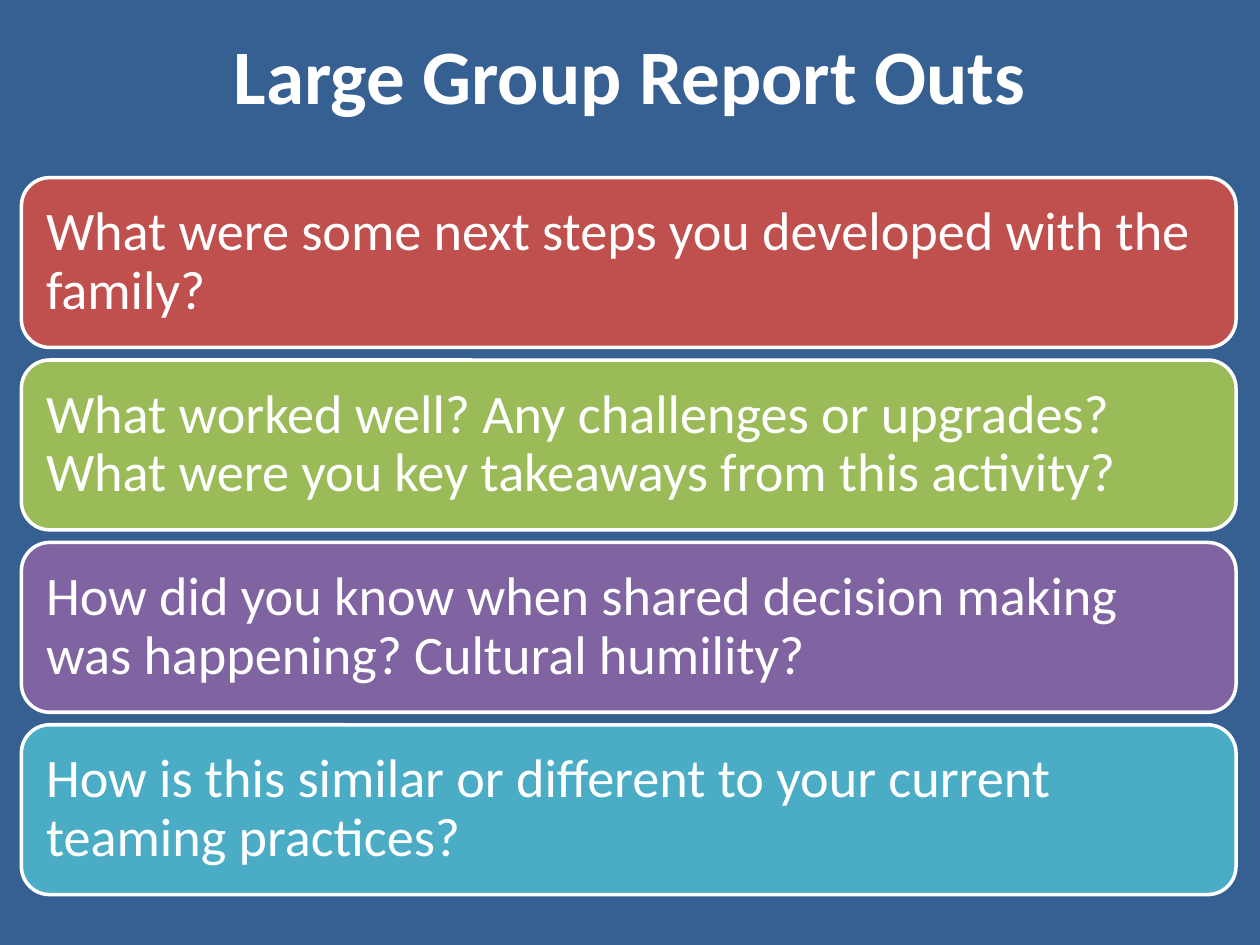
import pptx
import pptx.util
import pptx.dml.color
import pptx.enum.shapes
import pptx.enum.text

RGBColor = pptx.dml.color.RGBColor
Inches = pptx.util.Inches
Pt = pptx.util.Pt

NAVY = RGBColor(0x37, 0x60, 0x92)
WHITE = RGBColor(0xFF, 0xFF, 0xFF)
RED = RGBColor(0xC0, 0x50, 0x4D)
GREEN = RGBColor(0x9B, 0xBB, 0x59)
PURPLE = RGBColor(0x80, 0x64, 0xA2)
TEAL = RGBColor(0x4B, 0xAC, 0xC6)

FONT = "Calibri"
SLIDE_WIDTH, SLIDE_HEIGHT = 10, 7.5
TITLE_BOX = (0.5, 0, 9, 1.17)
QUESTIONS_BOX = (0.17, 1.41, 9.64, 5.69)
ROW_GAP = 0.1

QUESTIONS = [
    ("What were some next steps you developed with the family?", RED),
    ("What worked well? Any challenges or upgrades? "
     "What were you key takeaways from this activity?", GREEN),
    ("How did you know when shared decision making was happening? "
     "Cultural humility?", PURPLE),
    ("How is this similar or different to your current teaming practices?", TEAL),
]


def write_text(frame, text, size, bold=False, spacing=1.0, margin=0.1,
               align=pptx.enum.text.PP_ALIGN.LEFT):
    """Fill a text frame with one formatted, vertically centred paragraph."""
    frame.word_wrap = True
    frame.auto_size = pptx.enum.text.MSO_AUTO_SIZE.NONE
    frame.vertical_anchor = pptx.enum.text.MSO_ANCHOR.MIDDLE
    frame.margin_left = frame.margin_right = Inches(margin)
    frame.margin_top = frame.margin_bottom = Inches(margin)
    para = frame.paragraphs[0]
    para.alignment = align
    para.line_spacing = spacing
    span = para.add_run()
    span.text = text
    span.font.name = FONT
    span.font.size = Pt(size)
    span.font.bold = bold
    span.font.color.rgb = WHITE


def place_title(page, box, text):
    """Move the title placeholder into the box and format it."""
    title = page.shapes.title
    title.left, title.top, title.width, title.height = map(Inches, box)
    write_text(title.text_frame, text, size=44, bold=True,
               align=pptx.enum.text.PP_ALIGN.CENTER)


def place_questions(page, box, questions):
    """Stack one rounded bar per question, in equal rows down the box."""
    left, top, width, height = box
    pitch = (height + ROW_GAP) / len(questions)
    for row, (text, color) in enumerate(questions):
        bar = page.shapes.add_shape(
            pptx.enum.shapes.MSO_SHAPE.ROUNDED_RECTANGLE,
            Inches(left), Inches(top + row * pitch),
            Inches(width), Inches(pitch - ROW_GAP))
        bar.shadow.inherit = False
        bar.fill.solid()
        bar.fill.fore_color.rgb = color
        bar.line.color.rgb = WHITE
        bar.line.width = Pt(2)
        write_text(bar.text_frame, text, size=31, spacing=0.9, margin=0.13)


def main():
    deck = pptx.Presentation()
    deck.slide_width = Inches(SLIDE_WIDTH)
    deck.slide_height = Inches(SLIDE_HEIGHT)
    page = deck.slides.add_slide(deck.slide_layouts.get_by_name("Title Only"))

    # Background
    page.background.fill.solid()
    page.background.fill.fore_color.rgb = NAVY

    # Title and question bars
    place_title(page, TITLE_BOX, "Large Group Report Outs")
    place_questions(page, QUESTIONS_BOX, QUESTIONS)

    deck.save("out.pptx")


if __name__ == "__main__":
    main()
